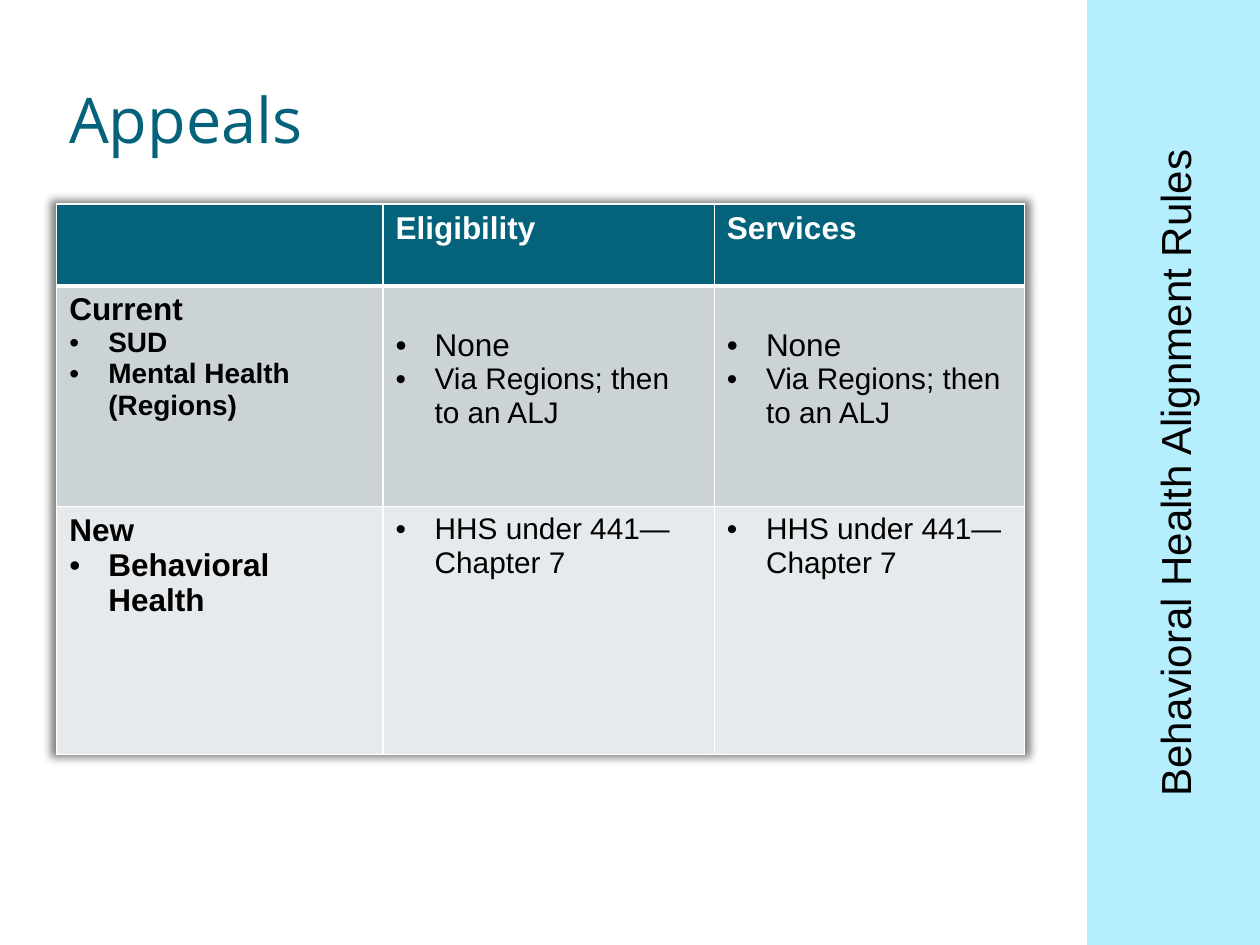
from lxml import etree
from pptx import Presentation
from pptx.dml.color import RGBColor
from pptx.enum.shapes import MSO_SHAPE
from pptx.enum.text import MSO_ANCHOR, PP_ALIGN
from pptx.oxml.ns import qn
from pptx.util import Inches, Pt

RECTANGLE = MSO_SHAPE.RECTANGLE
MIDDLE = MSO_ANCHOR.MIDDLE
CENTER = PP_ALIGN.CENTER

TEAL, WHITE, BLACK = "04627A", "FFFFFF", "000000"
LIME, SKY = "C6D668", "B5EEFD"
ROW_FILLS = [TEAL, "CCD3D7", "E7EAEC"]
COLUMN_WIDTHS = [2.59, 2.63, 2.46]
ROW_HEIGHTS = [0.65, 1.75, 1.97]
PANEL_OUTLINE = [(8.91, 0), (9.21, 0.86), (9.39, 2.56), (9.65, 4.11),
                 (9.69, 6.41), (9.56, 7.54), (0, 7.52)]


def rgb(value):
    """Turn a hex string into a colour."""
    return RGBColor.from_string(value)


def add_child(parent, tag, **attributes):
    """Append an XML element with the given attributes."""
    return etree.SubElement(parent, qn(tag), {key: str(value) for key, value in attributes.items()})


class SlideBuilder:
    """Hold the style and the current slide."""

    body_font = "Arial"
    title_font = "Open Sans"
    indent = Inches(0.31)

    def __init__(self, presentation):
        """Add a blank slide with the theme background."""
        self.slide = presentation.slides.add_slide(presentation.slide_layouts[6])
        background = self.slide.background.fill
        background.solid()
        background.fore_color.rgb = rgb(LIME)

    def style(self, paragraph, size, color, bold=False, font=None):
        """Set the font of a paragraph."""
        paragraph.font.name = font or self.body_font
        paragraph.font.size = Pt(size)
        paragraph.font.bold = bold
        paragraph.font.color.rgb = rgb(color)

    def panel(self, start, points, color):
        """Draw a filled polygon without an outline."""
        builder = self.slide.shapes.build_freeform(*start, scale=Inches(1))
        builder.add_line_segments(points, close=True)
        panel = builder.convert_to_shape()
        panel.shadow.inherit = False
        panel.fill.solid()
        panel.fill.fore_color.rgb = rgb(color)
        panel.line.fill.background()

    def title(self, text, left, top, width, height):
        """Write the slide title."""
        frame = self.slide.shapes.add_textbox(
            Inches(left), Inches(top), Inches(width), Inches(height)).text_frame
        frame.word_wrap = True
        frame.vertical_anchor = MIDDLE
        heading = frame.paragraphs[0]
        heading.text = text
        heading.line_spacing = 0.9
        self.style(heading, 36, TEAL, font=self.title_font)

    def sidebar(self, text, left, top, width, height):
        """Draw the band that reads upwards."""
        band = self.slide.shapes.add_shape(
            RECTANGLE, Inches(left), Inches(top), Inches(width), Inches(height))
        band.rotation = 270
        band.shadow.inherit = False
        band.fill.solid()
        band.fill.fore_color.rgb = rgb(SKY)
        band.line.color.rgb = rgb(SKY)
        band.line.width = Pt(1)
        band.text_frame.word_wrap = True
        band.text_frame.vertical_anchor = MIDDLE
        label = band.text_frame.paragraphs[0]
        label.text = text
        label.alignment = CENTER
        self.style(label, 24, BLACK)

    def bullet(self, paragraph):
        """Give a paragraph a hanging bullet."""
        properties = paragraph._p.get_or_add_pPr()
        properties.set("marL", str(self.indent))
        properties.set("indent", str(-self.indent))
        add_child(properties, "a:buFont", typeface=self.body_font)
        add_child(properties, "a:buChar", char="•")

    def borders(self, cell, bottom):
        """Draw white cell borders."""
        properties = cell._tc.get_or_add_tcPr()
        for side, width in (("L", 1), ("R", 1), ("T", 1), ("B", bottom)):
            line = add_child(properties, f"a:ln{side}", w=Pt(width))
            add_child(add_child(line, "a:solidFill"), "a:srgbClr", val=WHITE)

    def cell(self, cell, lines, row, top_margin):
        """Fill a cell with (text, size, bold, bulleted) lines."""
        self.borders(cell, 1 if row else 3)
        cell.fill.solid()
        cell.fill.fore_color.rgb = rgb(ROW_FILLS[row])
        cell.margin_top = Inches(top_margin)
        frame = cell.text_frame
        for index, (text, size, bold, bulleted) in enumerate(lines):
            paragraph = frame.add_paragraph() if index else frame.paragraphs[0]
            paragraph.text = text
            if bulleted:
                self.bullet(paragraph)
            self.style(paragraph, size, BLACK if row else WHITE, bold)

    def table(self, rows, left, top):
        """Draw the comparison table with a soft shadow."""
        table = self.slide.shapes.add_table(
            len(rows), len(COLUMN_WIDTHS), Inches(left), Inches(top),
            Inches(sum(COLUMN_WIDTHS)), Inches(sum(ROW_HEIGHTS))).table
        for column, width in zip(table.columns, COLUMN_WIDTHS):
            column.width = Inches(width)
        for row, height in zip(table.rows, ROW_HEIGHTS):
            row.height = Inches(height)
        for row, contents in enumerate(rows):
            for column, lines in enumerate(contents):
                drop = 0.33 if row == 1 and column else 0.05
                self.cell(table.cell(row, column), lines, row, drop)
        properties = table._tbl.tblPr
        effects = add_child(properties, "a:effectLst")
        properties.insert(0, effects)
        shadow = add_child(effects, "a:outerShdw", blurRad=Inches(0.07), dist=0,
                           sx=101000, sy=101000, algn="ctr", rotWithShape=0)
        add_child(add_child(shadow, "a:srgbClr", val=BLACK), "a:alpha", val=50000)


def main():
    """Build the appeals slide."""
    presentation = Presentation()
    presentation.slide_width = Inches(10)
    presentation.slide_height = Inches(7.5)

    current_appeals = [("None", 18, False, True),
                       ("Via Regions; then to an ALJ", 17, False, True)]
    new_appeals = [("HHS under 441—Chapter 7", 17, False, True)]
    rows = [
        [[], [("Eligibility", 18, True, False)], [("Services", 18, True, False)]],
        [[("Current", 18, True, False), ("SUD", 16, True, True),
          ("Mental Health (Regions)", 16, True, True)], current_appeals, current_appeals],
        [[("New", 18, True, False), ("Behavioral Health", 18, True, True)],
         new_appeals, new_appeals],
    ]

    builder = SlideBuilder(presentation)
    builder.panel((0, -0.02), PANEL_OUTLINE, WHITE)
    builder.title("Appeals", 0.45, 0.25, 8.62, 1.45)
    builder.table(rows, 0.45, 1.62)
    builder.sidebar("Behavioral Health Alignment Rules", 5.57, 3.07, 7.5, 1.37)
    presentation.save("out.pptx")


if __name__ == "__main__":
    main()
